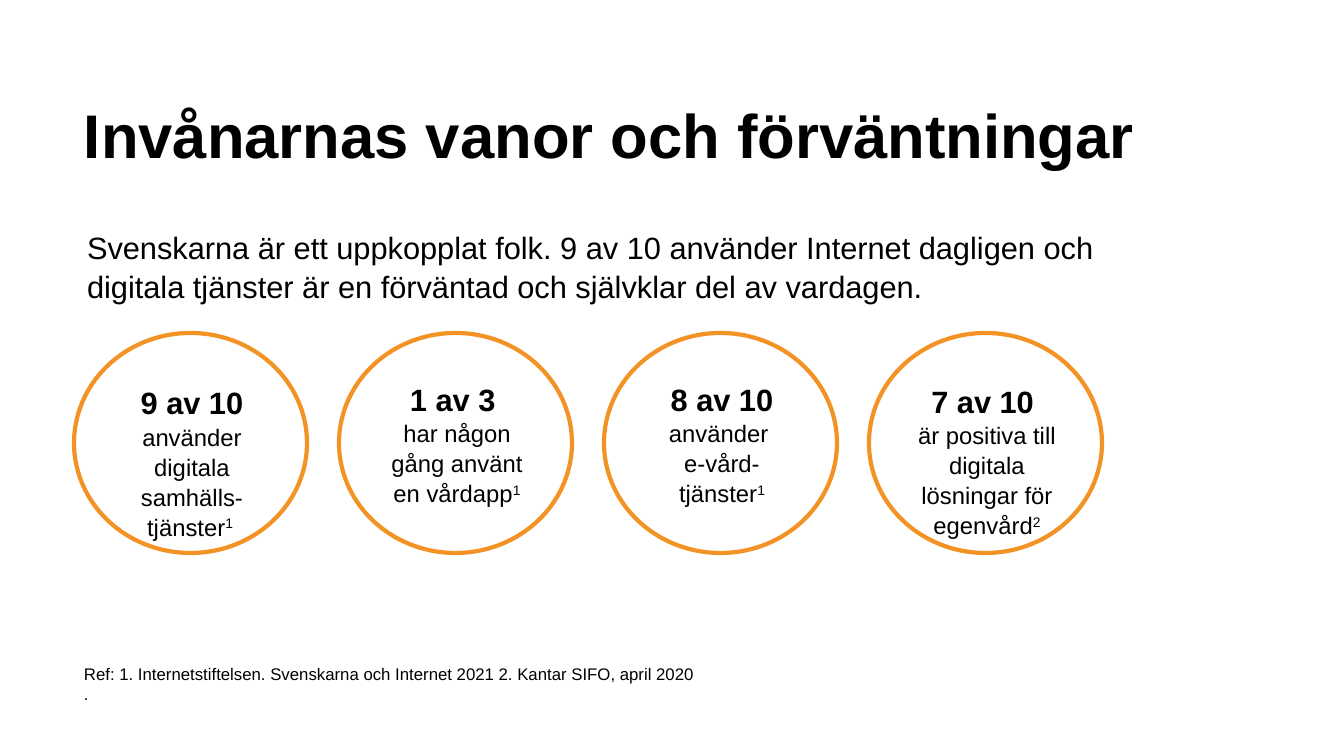
"""Build the slide on residents' digital habits and expectations."""
from pptx import Presentation, util as u
from pptx.dml.color import RGBColor
from pptx.enum import shapes, text

HEX = {"ink": "000000", "ring": "F39325"}
BIG = {"size": u.Pt(22), "bold": True}
SMALL = {"size": u.Pt(17), "bold": False}

TITLE = "Invånarnas vanor och förväntningar"
LEAD = ("Svenskarna är ett uppkopplat folk. 9 av 10 använder Internet dagligen och "
        "digitala tjänster är en förväntad och självklar del av vardagen.")
REFS = ["Ref: 1. Internetstiftelsen. Svenskarna och Internet 2021 2. Kantar SIFO, april 2020", "."]

BOXES = [
    ((74, 97, 1143, 136), [TITLE], {"size": u.Pt(44), "bold": True}, 10, 0.95),
    ((74, 222, 1059, 102), [LEAD], {"size": u.Pt(22)}, 13, 1.05),
    ((74, 659, 1143, 50), REFS, {"size": u.Pt(12)}, 10, 1.0),
]
RINGS = [
    ("9 av 10 ", ["använder digitala samhälls-tjänster"], "1 ", False, 37),
    ("1 av 3 ", ["har någon gång använt en vårdapp"], "1", True, 0),
    ("8 av 10 ", ["använder ", "e-vård-tjänster"], "1", False, 0),
    ("7 av 10 ", ["är positiva till digitala lösningar för egenvård"], "2", True, 34),
]
LEFT, TOP, WIDE, HIGH, STEP = 74, 333, 233, 220, 265
SCALE = 914400 / 100.8


def px(n):
    return u.Emu(round(n * SCALE))


def rgb(name):
    return RGBColor.from_string(HEX[name])


def put(obj, form):
    for key, val in form.items():
        setattr(obj, key, val)


def add_run(para, words, form):
    run = para.add_run()
    run.text = words
    put(run.font, {"name": "Arial", **form})
    run.font.color.rgb = rgb("ink")
    return run


def set_frame(frame, left, top, anchor):
    put(frame, {"word_wrap": True, "vertical_anchor": anchor,
                "margin_left": px(left), "margin_right": px(10),
                "margin_top": px(top), "margin_bottom": px(5)})


def add_box(slide, area, lines, form, inset, space):
    frame = slide.shapes.add_textbox(*map(px, area)).text_frame
    set_frame(frame, inset, 5, text.MSO_ANCHOR.TOP)
    for i, line in enumerate(lines):
        para = frame.add_paragraph() if i else frame.paragraphs[0]
        para.line_spacing = space
        add_run(para, line, form)


def add_ring(slide, left, head, lines, note, split, drop):
    ring = slide.shapes.add_shape(shapes.MSO_SHAPE.OVAL, *map(px, (left, TOP, WIDE, HIGH)))
    ring.shadow.inherit = False
    ring.fill.background()
    ring.line.color.rgb = rgb("ring")
    ring.line.width = u.Pt(3)
    frame = ring.text_frame
    set_frame(frame, 13, 5 + drop, text.MSO_ANCHOR.MIDDLE)
    para = frame.paragraphs[0]
    add_run(para, head, BIG)
    if split:
        para = frame.add_paragraph()
    for i, line in enumerate(lines):
        if i:
            para.add_line_break()
        add_run(para, line, SMALL)
    mark = add_run(para, note, SMALL)
    mark.font._element.set("baseline", "30000")
    for para in frame.paragraphs:
        put(para, {"alignment": text.PP_ALIGN.CENTER, "line_spacing": 1.05})


def main():
    deck = Presentation()
    put(deck, {"slide_width": px(1344), "slide_height": px(756)})
    slide = deck.slides.add_slide(deck.slide_layouts[6])
    for box in BOXES:
        add_box(slide, *box)
    for i, ring in enumerate(RINGS):
        add_ring(slide, LEFT + i * STEP, *ring)
    deck.save("out.pptx")


if __name__ == "__main__":
    main()
